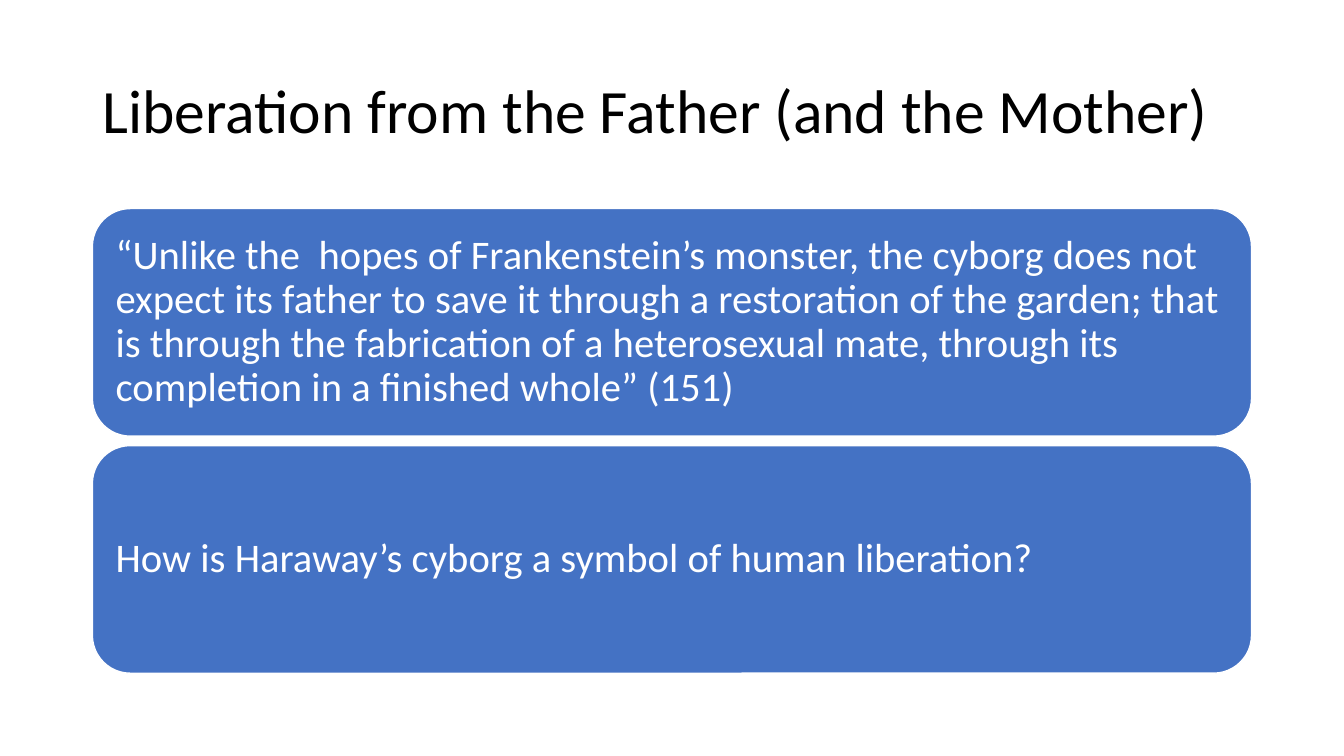
from dataclasses import dataclass

from pptx import Presentation
from pptx.dml.color import RGBColor
from pptx.enum.shapes import MSO_SHAPE
from pptx.enum.text import MSO_ANCHOR, MSO_AUTO_SIZE, PP_ALIGN
from pptx.util import Pt


@dataclass(frozen=True)
class Theme:
    font: str = "Calibri"
    title_size: int = 44
    panel_size: int = 29
    black: RGBColor = RGBColor(0x00, 0x00, 0x00)
    white: RGBColor = RGBColor(0xFF, 0xFF, 0xFF)
    blue: RGBColor = RGBColor(0x44, 0x72, 0xC4)


THEME = Theme()
LEFT, WIDTH = 66, 828
PANEL_TOP, PANEL_HEIGHT, PANEL_GAP = 149, 162.6, 6.7
PANELS = [
    "“Unlike the  hopes of Frankenstein’s monster, the cyborg does not expect "
    "its father to save it through a restoration of the garden; that is through "
    "the fabrication of a heterosexual mate, through its completion in a "
    "finished whole” (151)",
    "How is Haraway’s cyborg a symbol of human liberation?",
]


def set_all(target, values):
    for name, value in values.items():
        setattr(target, name, value)


def write(shape, text, size, color, inset):
    """Fill a shape with one left-aligned, vertically centred paragraph."""
    tf = shape.text_frame
    set_all(tf, {"word_wrap": True, "auto_size": MSO_AUTO_SIZE.NONE,
                 "vertical_anchor": MSO_ANCHOR.MIDDLE,
                 "margin_left": Pt(inset), "margin_right": Pt(inset)})
    p = tf.paragraphs[0]
    set_all(p, {"alignment": PP_ALIGN.LEFT, "line_spacing": 0.9})
    r = p.add_run()
    r.text = text
    set_all(r.font, {"name": THEME.font, "size": Pt(size)})
    r.font.color.rgb = color


def add_title(s, text):
    title = s.shapes.title
    set_all(title, {"left": Pt(LEFT), "top": Pt(28.8),
                    "width": Pt(WIDTH), "height": Pt(104.4)})
    write(title, text, THEME.title_size, THEME.black, 7.2)


def add_panel(s, top, text):
    panel = s.shapes.add_shape(MSO_SHAPE.ROUNDED_RECTANGLE, Pt(LEFT), Pt(top),
                               Pt(WIDTH), Pt(PANEL_HEIGHT))
    panel.shadow.inherit = False
    panel.fill.solid()
    panel.fill.fore_color.rgb = THEME.blue
    panel.line.color.rgb = THEME.white
    panel.line.width = Pt(1)
    write(panel, text, THEME.panel_size, THEME.white, 8.7)


def main():
    prs = Presentation()
    set_all(prs, {"slide_width": Pt(960), "slide_height": Pt(540)})
    s = prs.slides.add_slide(prs.slide_layouts.get_by_name("Title Only"))
    add_title(s, "Liberation from the Father (and the Mother)")
    for i, text in enumerate(PANELS):
        add_panel(s, PANEL_TOP + i * (PANEL_HEIGHT + PANEL_GAP), text)
    prs.save("out.pptx")


if __name__ == "__main__":
    main()
